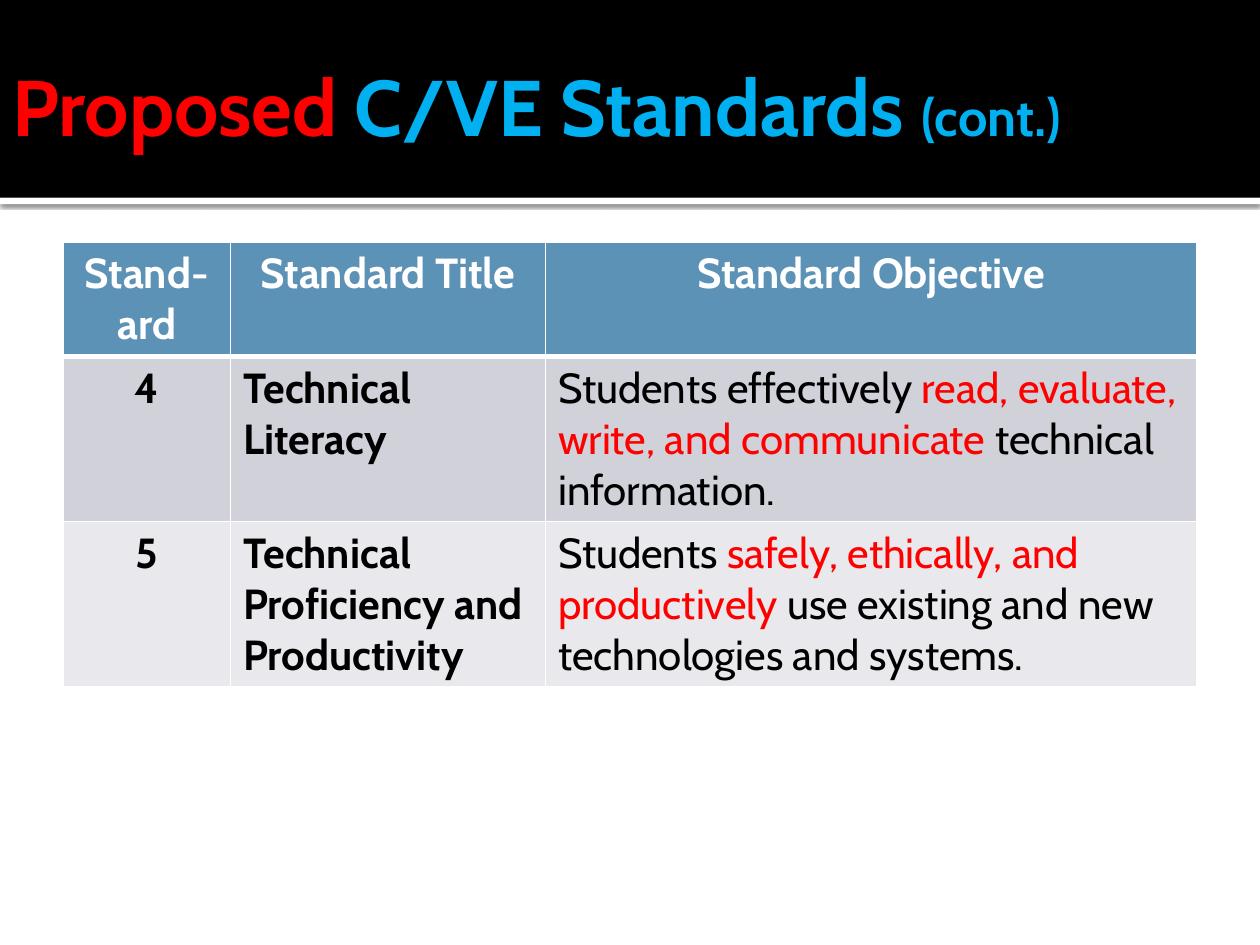
"""Build the slide of proposed C/VE standards four and five."""
from dataclasses import dataclass

from lxml import etree
from pptx import Presentation
from pptx.dml.color import RGBColor
from pptx.enum.shapes import MSO_SHAPE
from pptx.enum.text import MSO_ANCHOR, PP_ALIGN
from pptx.oxml.ns import qn
from pptx.util import Inches, Pt

RECTANGLE = MSO_SHAPE.RECTANGLE
MIDDLE = MSO_ANCHOR.MIDDLE
LEFT, CENTER = PP_ALIGN.LEFT, PP_ALIGN.CENTER

FONT = "Cabin"
WHITE, BLACK, RED, SKY = "FFFFFF", "000000", "FF0000", "00B0F0"
HEADER_FILL = "5C92B5"
COLUMN_WIDTHS = (1.33, 2.5, 5.17)


@dataclass(frozen=True)
class Span:
    text: str
    color: str = BLACK
    size: float | None = None


@dataclass(frozen=True)
class Row:
    cells: tuple[tuple[Span, ...], ...]
    height: float
    fill: str
    bold: tuple[bool, ...]
    alignments: tuple
    bottom_border: float = 1


def header_row(*titles: str) -> Row:
    """Return the row of column titles."""
    cells = tuple((Span(title, WHITE),) for title in titles)
    return Row(cells, 0.91, HEADER_FILL, (True,) * 3, (CENTER,) * 3, 3)


def standard_row(number: str, title: str, objective: tuple[Span, ...], fill: str) -> Row:
    """Return the row of one standard."""
    cells = ((Span(number),), (Span(title),), objective)
    return Row(cells, 1.31, fill, (True, True, False), (CENTER, LEFT, LEFT))


ROWS = (
    header_row("Stand-ard", "Standard Title", "Standard Objective"),
    standard_row("4", "Technical Literacy", (
        Span("Students effectively "),
        Span("read, evaluate, write, and communicate ", RED),
        Span("technical information."),
    ), "D1D1DA"),
    standard_row("5", "Technical Proficiency and Productivity", (
        Span("Students "),
        Span("safely, ethically, and productively ", RED),
        Span("use existing and new technologies and systems."),
    ), "E9E9ED"),
)

TITLE = (
    Span("Proposed ", RED),
    Span("C/VE Standards ", SKY),
    Span("(cont.)", SKY, 30),
)


def rgb(color: str) -> RGBColor:
    """Return the colour of a hex string."""
    return RGBColor.from_string(color)


def write_spans(paragraph, spans: tuple[Span, ...], size: float, bold: bool) -> None:
    """Write coloured spans into a paragraph."""
    paragraph.font.name = FONT
    paragraph.font.size = Pt(size)
    paragraph.font.bold = bold
    for span in spans:
        run = paragraph.add_run()
        run.text = span.text
        run.font.color.rgb = rgb(span.color)
        if span.size:
            run.font.size = Pt(span.size)


def add_band(slide, top: float, height: float, color: str):
    """Add a plain band across the slide."""
    band = slide.shapes.add_shape(RECTANGLE, 0, Inches(top), Inches(10), Inches(height))
    band.fill.solid()
    band.fill.fore_color.rgb = rgb(color)
    band.line.fill.background()
    band.shadow.inherit = False
    return band


def add_shadow(shape) -> None:
    """Cast a soft shadow straight down from a shape."""
    effects = shape.element.spPr.find(qn("a:effectLst"))
    shadow = etree.SubElement(
        effects, qn("a:outerShdw"), blurRad=str(Pt(2.5)), dist=str(Pt(0.8)),
        dir="5400000", rotWithShape="0")
    color = etree.SubElement(shadow, qn("a:srgbClr"), val=BLACK)
    etree.SubElement(color, qn("a:alpha"), val="60000")


def add_title(slide) -> None:
    """Add the slide title."""
    box = slide.shapes.add_textbox(Inches(0), Inches(0.25), Inches(9), Inches(1.17))
    frame = box.text_frame
    frame.word_wrap = True
    frame.vertical_anchor = MIDDLE
    frame.margin_left = Inches(0.1)
    frame.margin_right = Inches(0.05)
    write_spans(frame.paragraphs[0], TITLE, 45, True)


def set_borders(cell, bottom_width: float) -> None:
    """Give a cell white borders."""
    properties = cell._tc.get_or_add_tcPr()
    for side, width in (("L", 1), ("R", 1), ("T", 1), ("B", bottom_width)):
        line = etree.SubElement(properties, qn(f"a:ln{side}"), w=str(Pt(width)))
        fill = etree.SubElement(line, qn("a:solidFill"))
        etree.SubElement(fill, qn("a:srgbClr"), val=WHITE)


def add_standards_table(slide) -> None:
    """Add the table of standards."""
    frame = slide.shapes.add_table(
        len(ROWS), len(COLUMN_WIDTHS), Inches(0.5), Inches(1.92),
        Inches(sum(COLUMN_WIDTHS)), Inches(sum(row.height for row in ROWS)))
    table = frame.table
    for column, width in zip(table.columns, COLUMN_WIDTHS):
        column.width = Inches(width)
    for row, table_row in zip(ROWS, table.rows):
        table_row.height = Inches(row.height)
        for cell, spans, bold, alignment in zip(
                table_row.cells, row.cells, row.bold, row.alignments):
            set_borders(cell, row.bottom_border)
            cell.fill.solid()
            cell.fill.fore_color.rgb = rgb(row.fill)
            paragraph = cell.text_frame.paragraphs[0]
            paragraph.alignment = alignment
            write_spans(paragraph, spans, 24, bold)


def main() -> None:
    """Build and save the presentation."""
    presentation = Presentation()
    presentation.slide_width = Inches(10)
    presentation.slide_height = Inches(7.5)
    slide = presentation.slides.add_slide(presentation.slide_layouts[6])
    add_shadow(add_band(slide, 1.57, 0.05, WHITE))
    add_band(slide, 0, 1.57, BLACK)
    add_title(slide)
    add_standards_table(slide)
    presentation.save("out.pptx")


if __name__ == "__main__":
    main()
